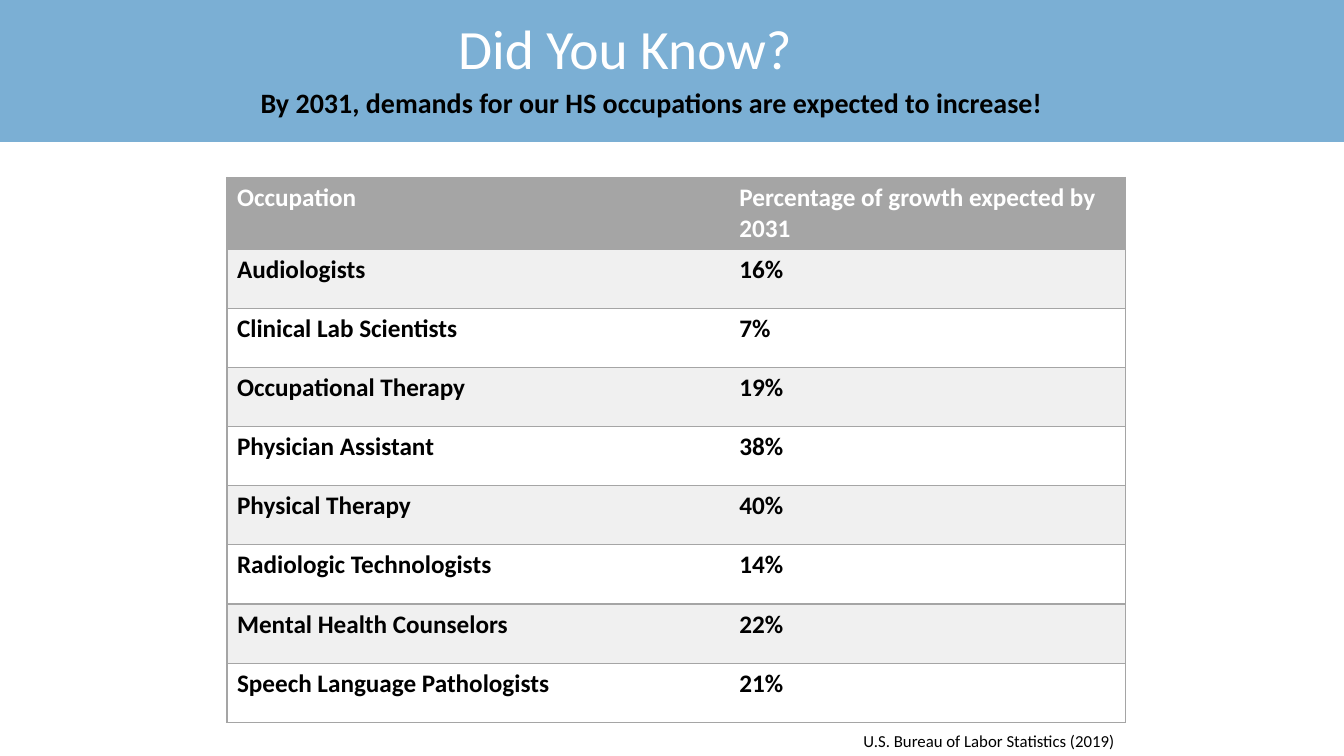
from dataclasses import dataclass

from lxml import etree
from pptx import Presentation
from pptx.dml.color import RGBColor
from pptx.enum.shapes import MSO_SHAPE
from pptx.enum.text import MSO_ANCHOR, PP_ALIGN
from pptx.oxml.ns import qn
from pptx.util import Cm, Pt

RECTANGLE = MSO_SHAPE.RECTANGLE
TOP, MIDDLE = MSO_ANCHOR.TOP, MSO_ANCHOR.MIDDLE
LEFT, CENTER, RIGHT = PP_ALIGN.LEFT, PP_ALIGN.CENTER, PP_ALIGN.RIGHT


@dataclass(frozen=True)
class Theme:
    font: str = "Calibri"
    banner: str = "7BAFD4"
    grid: str = "A5A5A5"
    band: str = "F0F0F0"
    white: str = "FFFFFF"
    black: str = "000000"
    title_size: float = 39.6
    subtitle_size: float = 20
    table_size: float = 18
    source_size: float = 12


theme = Theme()


def write_text(text_frame, text, *, size, color=theme.black, bold=False,
               align=LEFT, anchor=TOP, line_spacing=1.0):
    text_frame.word_wrap = True
    text_frame.vertical_anchor = anchor
    paragraph = text_frame.paragraphs[0]
    paragraph.alignment = align
    paragraph.line_spacing = line_spacing
    run = paragraph.add_run()
    run.text = text
    run.font.name = theme.font
    run.font.size = Pt(size)
    run.font.bold = bold
    run.font.color.rgb = RGBColor.from_string(color)


def set_borders(cell, visible_sides):
    """Draw the named sides (L, R, T, B) and hide the others; call before filling."""
    properties = cell._tc.get_or_add_tcPr()
    for side in "LRTB":
        line = etree.SubElement(properties, qn(f"a:ln{side}"), w=str(Pt(1)))
        if side in visible_sides:
            fill = etree.SubElement(line, qn("a:solidFill"))
            etree.SubElement(fill, qn("a:srgbClr"), val=theme.grid)
        else:
            etree.SubElement(line, qn("a:noFill"))


presentation = Presentation()
presentation.slide_width = Cm(33.87)
presentation.slide_height = Cm(19.05)
slide = presentation.slides.add_slide(presentation.slide_layouts[6])

# Banner with title and subtitle
banner = slide.shapes.add_shape(RECTANGLE, Cm(0), Cm(-0.05), Cm(33.87), Cm(3.63))
banner.shadow.inherit = False
banner.fill.solid()
banner.fill.fore_color.rgb = RGBColor.from_string(theme.banner)
banner.line.fill.background()

title = slide.shapes.add_textbox(Cm(5.92), Cm(0.46), Cm(19.66), Cm(1.7))
write_text(title.text_frame, "Did You Know?", size=theme.title_size,
           color=theme.white, align=CENTER, anchor=MIDDLE, line_spacing=0.9)

subtitle = slide.shapes.add_textbox(Cm(5.42), Cm(2.26), Cm(22), Cm(1))
write_text(subtitle.text_frame,
           "By 2031, demands for our HS occupations are expected to increase!",
           size=theme.subtitle_size, bold=True, align=CENTER, line_spacing=0.7)

# Growth table
growth_rows = [
    ("Occupation", "Percentage of growth expected by 2031"),
    ("Audiologists", "16%"),
    ("Clinical Lab Scientists", "7%"),
    ("Occupational Therapy", "19%"),
    ("Physician Assistant", "38%"),
    ("Physical Therapy", "40%"),
    ("Radiologic Technologists", "14%"),
    ("Mental Health Counselors", "22%"),
    ("Speech Language Pathologists", "21%"),
]
column_widths = [Cm(12.66), Cm(9.99)]
header_height, row_height = Cm(1.81), Cm(1.49)

growth_table = slide.shapes.add_table(
    len(growth_rows), len(column_widths), Cm(5.72), Cm(4.47), sum(column_widths),
    header_height + row_height * (len(growth_rows) - 1)).table
for column, width in zip(growth_table.columns, column_widths):
    column.width = width

for row_index, values in enumerate(growth_rows):
    is_header = row_index == 0
    growth_table.rows[row_index].height = header_height if is_header else row_height
    if is_header:
        fill_color = theme.grid
    else:
        fill_color = theme.band if row_index % 2 else theme.white
    for column_index, value in enumerate(values):
        cell = growth_table.cell(row_index, column_index)
        set_borders(cell, "LTB" if column_index == 0 else "RTB")
        cell.fill.solid()
        cell.fill.fore_color.rgb = RGBColor.from_string(fill_color)
        write_text(cell.text_frame, value, size=theme.table_size, bold=True,
                   color=theme.white if is_header else theme.black)

# Source line
source = slide.shapes.add_textbox(Cm(20.52), Cm(18.29), Cm(7.82), Cm(0.76))
write_text(source.text_frame, "U.S. Bureau of Labor Statistics (2019)",
           size=theme.source_size, align=RIGHT)

presentation.save("out.pptx")
